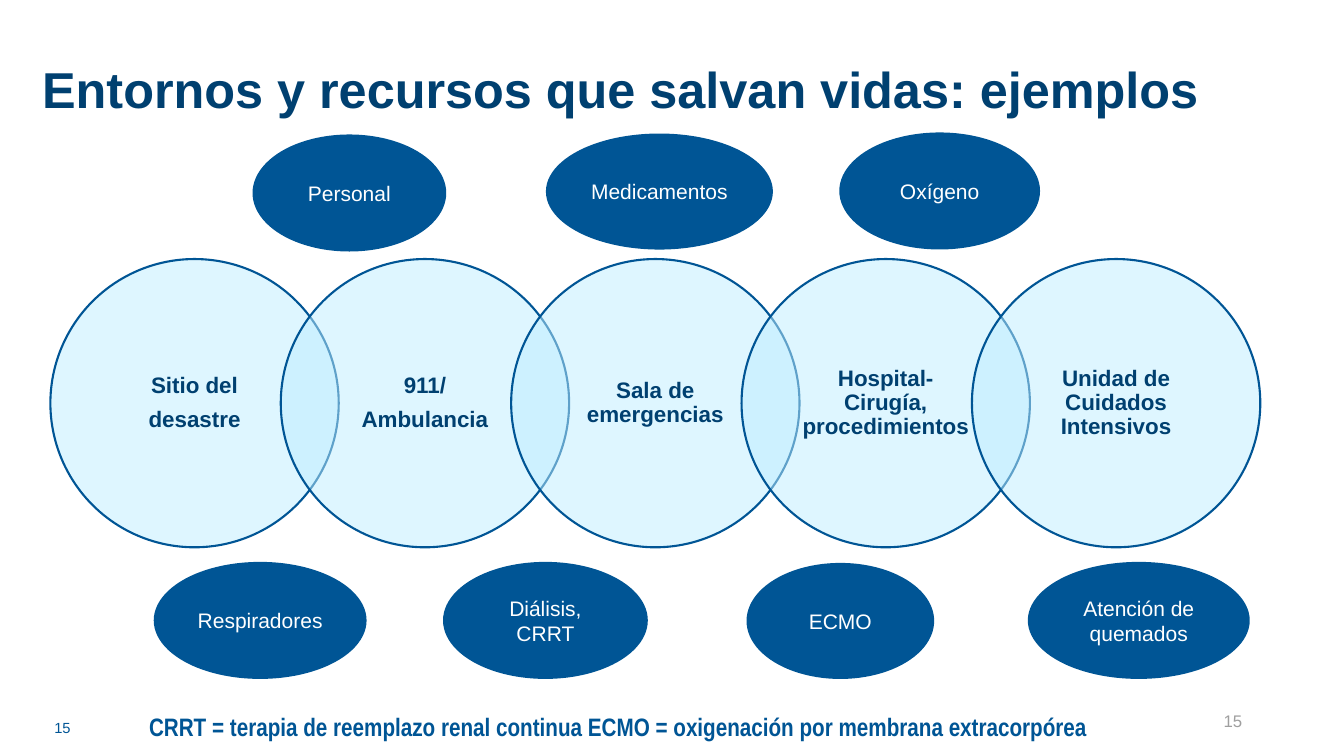
from dataclasses import dataclass

from lxml.etree import SubElement
from pptx import Presentation
from pptx.dml.color import RGBColor
from pptx.enum.shapes import MSO_SHAPE
from pptx.enum.text import MSO_ANCHOR, PP_ALIGN
from pptx.oxml.ns import qn
from pptx.shapes.autoshape import Shape
from pptx.slide import Slide
from pptx.util import Inches, Pt


@dataclass(frozen=True)
class Theme:
    navy: RGBColor = RGBColor(0x00, 0x40, 0x70)
    blue: RGBColor = RGBColor(0x00, 0x55, 0x95)
    pale: RGBColor = RGBColor(0xBE, 0xEE, 0xFF)
    gray: RGBColor = RGBColor(0x9F, 0x9F, 0x9F)
    white: RGBColor = RGBColor(0xFF, 0xFF, 0xFF)
    title_size: float = 36
    setting_size: float = 16
    resource_size: float = 15
    glossary_size: float = 18
    number_size: float = 12
    footer_size: float = 10.5
    setting_opacity: int = 50


@dataclass(frozen=True)
class Box:
    left: float
    top: float
    width: float
    height: float


@dataclass(frozen=True)
class Style:
    size: float
    color: RGBColor
    bold: bool = False
    font: str = "Arial"
    align: PP_ALIGN = PP_ALIGN.LEFT
    anchor: MSO_ANCHOR = MSO_ANCHOR.MIDDLE
    line_spacing: float = 1.0
    space_after: float = 0


@dataclass(frozen=True)
class Label:
    text: str
    box: Box
    style: Style


@dataclass(frozen=True)
class Resource:
    name: str
    box: Box


THEME = Theme()
SETTING_STYLE = Style(THEME.setting_size, THEME.navy, bold=True, align=PP_ALIGN.CENTER,
                      line_spacing=0.9, space_after=7)
RESOURCE_STYLE = Style(THEME.resource_size, THEME.white, align=PP_ALIGN.CENTER)

SETTING_LEFT, SETTING_TOP, SETTING_DIAMETER = 0.5, 2.57, 2.86
SETTING_PITCH = 9.14 / 4
SETTINGS = [
    "Sitio del\ndesastre",
    "911/\nAmbulancia",
    "Sala de emergencias",
    "Hospital- Cirugía, procedimientos",
    "Unidad de Cuidados Intensivos",
]

RESOURCES = [
    Resource("Personal", Box(2.52, 1.35, 1.89, 1.13)),
    Resource("Medicamentos", Box(5.43, 1.34, 2.22, 1.12)),
    Resource("Oxígeno", Box(8.34, 1.33, 1.96, 1.13)),
    Resource("Respiradores", Box(1.54, 5.59, 2.08, 1.13)),
    Resource("Diálisis, CRRT", Box(4.41, 5.59, 2.0, 1.13)),
    Resource("ECMO", Box(7.42, 5.6, 1.83, 1.12)),
    Resource("Atención de quemados", Box(10.21, 5.59, 2.17, 1.13)),
]

LABELS = [
    Label("Entornos y recursos que salvan vidas: ejemplos", Box(0.32, 0.29, 12.84, 1.25),
          Style(THEME.title_size, THEME.navy, bold=True, line_spacing=0.9)),
    Label("15", Box(0.44, 7.08, 3.11, 0.27), Style(THEME.footer_size, THEME.blue)),
    Label("CRRT = terapia de reemplazo renal continua "
          "ECMO = oxigenación por membrana extracorpórea", Box(1.38, 7.01, 10.72, 0.4),
          Style(THEME.glossary_size, THEME.blue, bold=True, font="Arial Narrow",
                anchor=MSO_ANCHOR.TOP)),
    Label("15", Box(9.42, 6.95, 3.0, 0.4),
          Style(THEME.number_size, THEME.gray, align=PP_ALIGN.RIGHT)),
]


def write_text(shape: Shape, text: str, style: Style) -> None:
    frame = shape.text_frame
    frame.text = text
    frame.word_wrap = True
    frame.vertical_anchor = style.anchor
    for paragraph in frame.paragraphs:
        paragraph.alignment = style.align
        paragraph.line_spacing = style.line_spacing
        paragraph.space_after = Pt(style.space_after)
        paragraph.font.name = style.font
        paragraph.font.size = Pt(style.size)
        paragraph.font.bold = style.bold
        paragraph.font.color.rgb = style.color


def inches(box: Box) -> tuple[Inches, Inches, Inches, Inches]:
    return Inches(box.left), Inches(box.top), Inches(box.width), Inches(box.height)


def add_ellipse(slide: Slide, box: Box, fill: RGBColor, line_width: float) -> Shape:
    ellipse = slide.shapes.add_shape(MSO_SHAPE.OVAL, *inches(box))
    ellipse.shadow.inherit = False
    ellipse.fill.solid()
    ellipse.fill.fore_color.rgb = fill
    ellipse.line.color.rgb = THEME.blue
    ellipse.line.width = Pt(line_width)
    return ellipse


def set_opacity(shape: Shape, percent: int) -> None:
    color = shape.element.spPr.find(qn("a:solidFill")).find(qn("a:srgbClr"))
    SubElement(color, qn("a:alpha")).set("val", str(percent * 1000))


def add_setting(slide: Slide, index: int, name: str) -> None:
    box = Box(SETTING_LEFT + index * SETTING_PITCH, SETTING_TOP,
              SETTING_DIAMETER, SETTING_DIAMETER)
    circle = add_ellipse(slide, box, THEME.pale, 1.5)
    set_opacity(circle, THEME.setting_opacity)
    write_text(circle, name, SETTING_STYLE)
    frame = circle.text_frame
    frame.margin_left = frame.margin_right = Inches(0.16)
    frame.margin_top = frame.margin_bottom = Inches(0.02)


def add_resource(slide: Slide, resource: Resource) -> None:
    ellipse = add_ellipse(slide, resource.box, THEME.blue, 2.25)
    write_text(ellipse, resource.name, RESOURCE_STYLE)


def add_label(slide: Slide, label: Label) -> None:
    write_text(slide.shapes.add_textbox(*inches(label.box)), label.text, label.style)


def main() -> None:
    presentation = Presentation()
    presentation.slide_width = Inches(13.33)
    presentation.slide_height = Inches(7.5)
    slide = presentation.slides.add_slide(presentation.slide_layouts[6])
    for index, name in enumerate(SETTINGS):
        add_setting(slide, index, name)
    for resource in RESOURCES:
        add_resource(slide, resource)
    for label in LABELS:
        add_label(slide, label)
    presentation.save("out.pptx")


if __name__ == "__main__":
    main()
